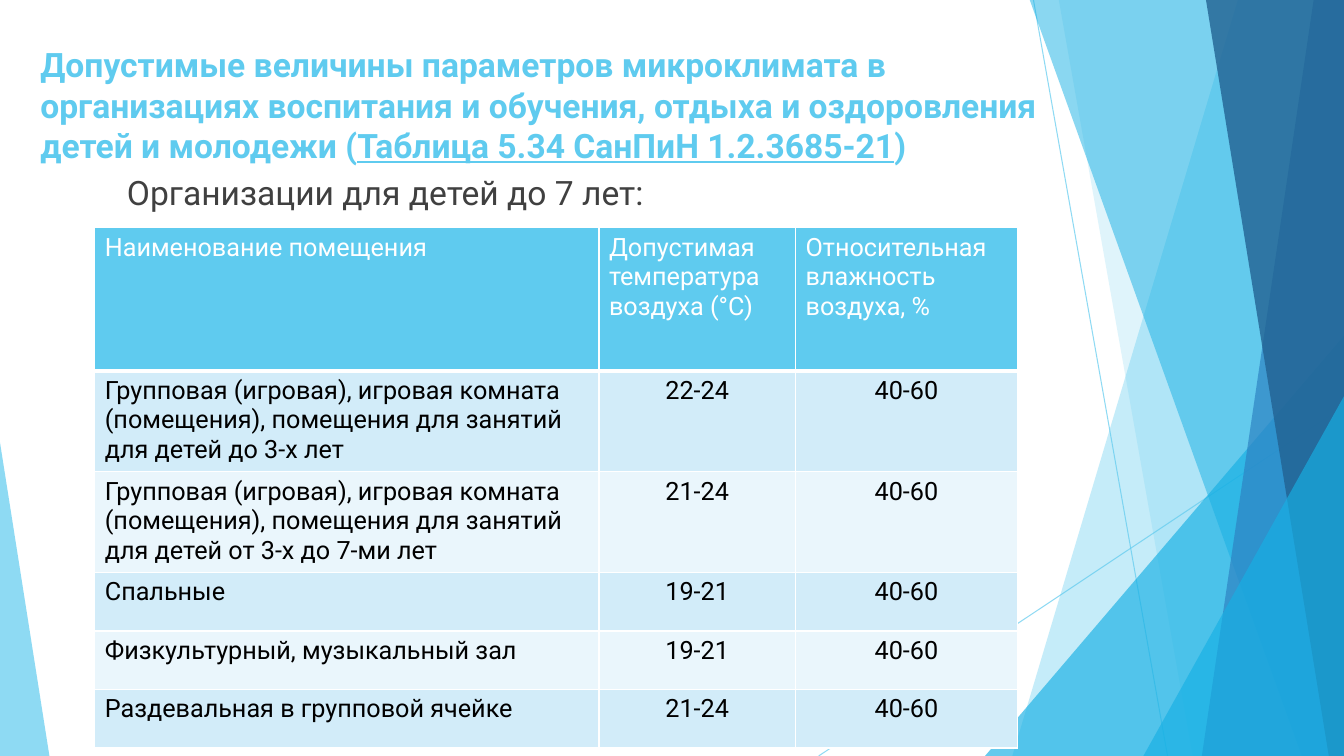
import pptx
import pptx.dml.color
import pptx.enum.shapes
import pptx.enum.text
import pptx.oxml.ns
import pptx.util
from lxml import etree
from pptx.util import Inches

FONT = "Roboto"
COLORS = {
    "sky": "5FCBEF",
    "cyan": "17B0E4",
    "blue": "2E83C3",
    "navy": "226292",
    "grey": "404040",
    "black": "000000",
    "white": "FFFFFF",
    "band_dark": "D2ECF9",
    "band_light": "EAF6FC",
}
WIDTH, HEIGHT = 13.33, 7.5
TOP = -0.01
ALIGN = pptx.enum.text.PP_ALIGN

# Facets in two layers: points of polygons, colour, opacity in percent
BACK_FACETS = [
    ([(12.28, TOP), (WIDTH, TOP), (WIDTH, HEIGHT), (10.04, HEIGHT)], "sky", 36),
    ([(10.5, TOP), (WIDTH, TOP), (WIDTH, HEIGHT), (11.83, HEIGHT)], "sky", 20),
]
FRONT_FACETS = [
    ([(10.21, TOP), (WIDTH, TOP), (WIDTH, HEIGHT), (12.91, HEIGHT)], "cyan", 50),
    ([(13.03, TOP), (WIDTH, TOP), (WIDTH, HEIGHT), (11.92, HEIGHT)], "blue", 70),
    ([(11.96, TOP), (WIDTH, TOP), (WIDTH, HEIGHT), (13.18, HEIGHT)], "navy", 80),
]

HEADERS = [
    "Наименование помещения",
    "Допустимая температура воздуха (°С)",
    "Относительная влажность воздуха, %",
]
ROOMS = [
    ("Групповая (игровая), игровая комната (помещения), "
     "помещения для занятий для детей до 3-х лет", "22-24"),
    ("Групповая (игровая), игровая комната (помещения), "
     "помещения для занятий для детей от 3-х до 7-ми лет", "21-24"),
    ("Спальные", "19-21"),
    ("Физкультурный, музыкальный зал", "19-21"),
    ("Раздевальная в групповой ячейке", "21-24"),
]
HUMIDITY = "40-60"
COLUMN_WIDTHS = [5, 1.95, 2.2]
ROW_HEIGHTS = [1.42, 1, 1, 0.58, 0.58, 0.58]


def rgb(name):
    return pptx.dml.color.RGBColor.from_string(COLORS[name])


def add_text(paragraph, text, size=18, color="black", bold=False,
             underline=False, align=ALIGN.LEFT):
    paragraph.alignment = align
    run = paragraph.add_run()
    run.text = text
    font = run.font
    font.name = FONT
    font.size = pptx.util.Pt(size)
    font.bold = bold
    font.underline = underline
    font.color.rgb = rgb(color)


def set_opacity(shape, percent):
    properties = shape.element.spPr
    for color in properties.iter(pptx.oxml.ns.qn("a:srgbClr")):
        etree.SubElement(color, pptx.oxml.ns.qn("a:alpha"), val=str(percent * 1000))


def paint(shape, color, opacity):
    shape.shadow.inherit = False
    shape.line.fill.background()
    shape.fill.solid()
    shape.fill.fore_color.rgb = rgb(color)
    set_opacity(shape, opacity)


def add_facet(slide, points, color, opacity):
    corners = [(Inches(x), Inches(y)) for x, y in points]
    builder = slide.shapes.build_freeform(*corners[0])
    builder.add_line_segments(corners[1:], close=True)
    paint(builder.convert_to_shape(), color, opacity)


def add_triangle(slide, left, top, width, apex, color, opacity):
    """Add a triangle that stands on the bottom edge of the slide."""
    shape = slide.shapes.add_shape(
        pptx.enum.shapes.MSO_SHAPE.ISOSCELES_TRIANGLE,
        Inches(left), Inches(top), Inches(width), Inches(HEIGHT - top))
    shape.adjustments[0] = apex
    paint(shape, color, opacity)


def add_thin_line(slide, start, end):
    line = slide.shapes.add_connector(
        pptx.enum.shapes.MSO_CONNECTOR.STRAIGHT,
        *(Inches(value) for value in (*start, *end)))
    line.line.color.rgb = rgb("sky")
    line.line.width = pptx.util.Pt(0.75)
    set_opacity(line, 70)
    etree.SubElement(line.element.spPr, pptx.oxml.ns.qn("a:effectLst"))


def add_decoration(slide):
    add_thin_line(slide, (10.25, 0), (11.58, HEIGHT))
    add_thin_line(slide, (WIDTH, 4.03), (8.12, HEIGHT))
    for facet in BACK_FACETS:
        add_facet(slide, *facet)
    add_triangle(slide, 9.77, 3.33, 3.56, 1, "cyan", 66)
    for facet in FRONT_FACETS:
        add_facet(slide, *facet)
    add_triangle(slide, 11.34, 3.93, 1.99, 1, "cyan", 66)
    add_triangle(slide, 0, 4.39, 0.49, 0, "sky", 70)


def fill_title(slide):
    title = slide.shapes.title
    title.left, title.top = Inches(0.3), Inches(0.39)
    title.width, title.height = Inches(10.57), Inches(1.65)
    frame = title.text_frame
    frame.word_wrap = True
    frame.vertical_anchor = pptx.enum.text.MSO_ANCHOR.TOP
    paragraph = frame.paragraphs[0]
    style = {"size": 24, "color": "sky", "bold": True}
    add_text(paragraph, "Допустимые величины параметров микроклимата в организациях "
             "воспитания и обучения, отдыха и оздоровления детей и молодежи (", **style)
    add_text(paragraph, "Таблица 5.34 СанПиН 1.2.3685-21", underline=True, **style)
    add_text(paragraph, ")", **style)
    # Bring the title in front of the decoration
    slide.shapes.element.append(title.element)


def add_subtitle(slide):
    box = slide.shapes.add_textbox(Inches(0.66), Inches(1.66), Inches(9.6), Inches(3.33))
    frame = box.text_frame
    frame.word_wrap = True
    frame.margin_left = Inches(0.6)
    add_text(frame.paragraphs[0], "Организации для детей до 7 лет:", size=24, color="grey")


def set_borders(cell, bottom):
    """Draw white cell borders; they must precede the fill in the cell's XML."""
    properties = cell._tc.get_or_add_tcPr()
    for side, points in (("L", 1), ("R", 1), ("T", 1), ("B", bottom)):
        line = etree.SubElement(properties, pptx.oxml.ns.qn(f"a:ln{side}"),
                                w=str(pptx.util.Pt(points)))
        fill = etree.SubElement(line, pptx.oxml.ns.qn("a:solidFill"))
        etree.SubElement(fill, pptx.oxml.ns.qn("a:srgbClr"), val=COLORS["white"])


def fill_cell(cell, text, fill, bottom=1, **style):
    set_borders(cell, bottom)
    cell.fill.solid()
    cell.fill.fore_color.rgb = rgb(fill)
    add_text(cell.text_frame.paragraphs[0], text, **style)


def add_climate_table(slide):
    table = slide.shapes.add_table(
        len(ROW_HEIGHTS), len(COLUMN_WIDTHS), Inches(0.94), Inches(2.26),
        Inches(sum(COLUMN_WIDTHS)), Inches(sum(ROW_HEIGHTS))).table
    for column, width in zip(table.columns, COLUMN_WIDTHS):
        column.width = Inches(width)
    for row, height in zip(table.rows, ROW_HEIGHTS):
        row.height = Inches(height)
    for column, header in enumerate(HEADERS):
        fill_cell(table.cell(0, column), header, "sky", bottom=3, color="white")
    for row, (room, temperature) in enumerate(ROOMS, start=1):
        band = "band_dark" if row % 2 else "band_light"
        for column, text in enumerate((room, temperature, HUMIDITY)):
            fill_cell(table.cell(row, column), text, band,
                      align=ALIGN.CENTER if column else ALIGN.LEFT)


def main():
    presentation = pptx.Presentation()
    presentation.slide_width = Inches(WIDTH)
    presentation.slide_height = Inches(HEIGHT)
    slide = presentation.slides.add_slide(presentation.slide_layouts[5])
    add_decoration(slide)
    fill_title(slide)
    add_subtitle(slide)
    add_climate_table(slide)
    presentation.save("out.pptx")


if __name__ == "__main__":
    main()
